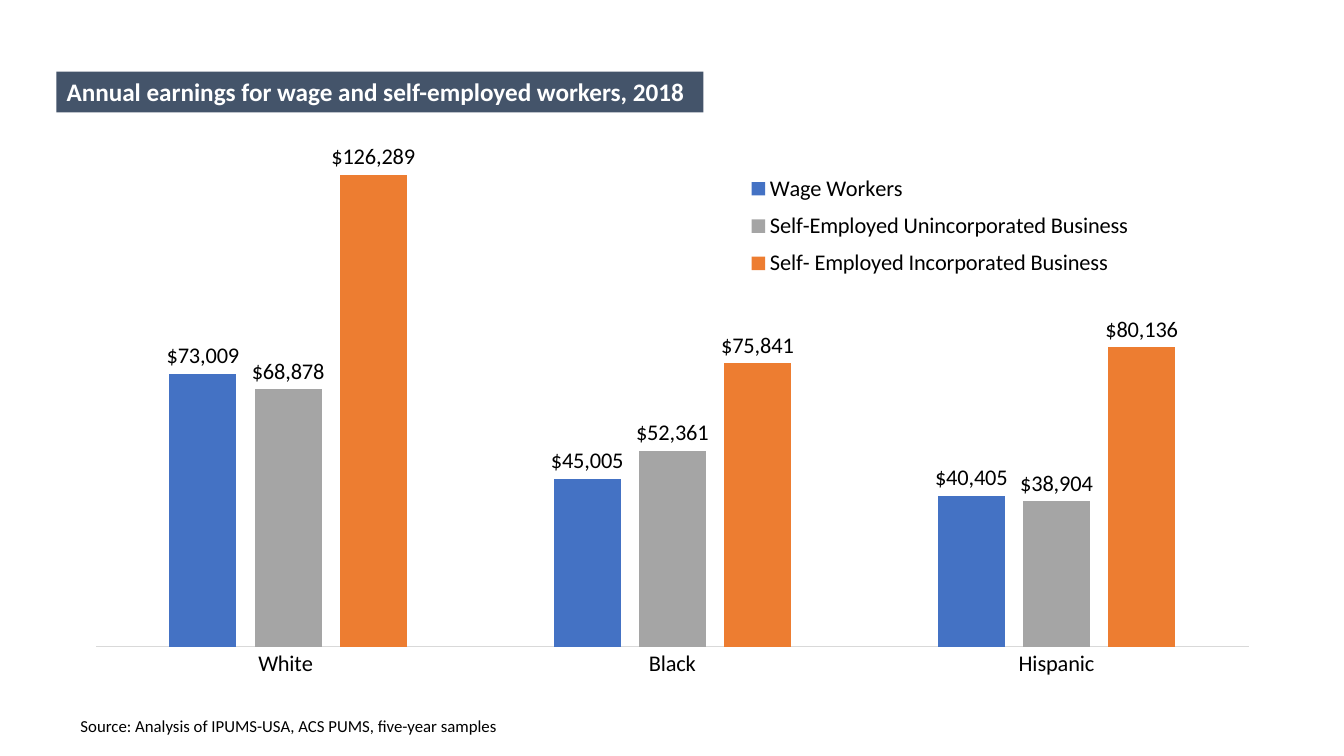
import pptx
import pptx.util
import pptx.dml.color
import pptx.chart.data
import pptx.enum.chart
import pptx.enum.text
import pptx.oxml
from pptx.util import Pt

TITLE = "Annual earnings for wage and self-employed workers, 2018"
SOURCE = "Source: Analysis of IPUMS-USA, ACS PUMS, five-year samples"
GROUPS = ["White ", "Black", "Hispanic"]
EARNINGS = [
    ("Wage Workers", "4472C4", (73009, 45005, 40405)),
    ("Self-Employed Unincorporated Business", "A5A5A5", (68878, 52361, 38904)),
    ("Self- Employed Incorporated Business", "ED7D31", (126289, 75841, 80136)),
]
DOLLARS = r'_("$"* #,##0_);_("$"* \(#,##0\);_("$"* "-"??_);_(@_)'
FONT = "Calibri"
CHART_BOX = (57.6, 22.3, 845.3, 495.4)
PLOT_BOX = (68.6, 88.2, 823.3, 374)
LEGEND_BOX = (519.5, 118, 304, 87)
TITLE_BOX = (40.3, 51.1, 462.2, 29.1)
SOURCE_BOX = (50.4, 507.6, 312, 21.8)


def color(hex_string):
    return pptx.dml.color.RGBColor.from_string(hex_string)


def set_font(font, size, hex_string="000000", bold=False):
    font.name = FONT
    font.size = Pt(size)
    font.bold = bold
    font.color.rgb = color(hex_string)


def manual_layout(box, inner=False):
    chart_left, chart_top, chart_width, chart_height = CHART_BOX
    left, top, width, height = box
    fractions = (
        (left - chart_left) / chart_width,
        (top - chart_top) / chart_height,
        width / chart_width,
        height / chart_height,
    )
    target = '<c:layoutTarget val="inner"/>' if inner else ""
    modes = "".join(f'<c:{axis}Mode val="edge"/>' for axis in "xy")
    sizes = "".join(f'<c:{name} val="{value:.4f}"/>' for name, value in zip("xywh", fractions))
    return pptx.oxml.parse_xml(
        '<c:layout xmlns:c="http://schemas.openxmlformats.org/drawingml/2006/chart">'
        f"<c:manualLayout>{target}{modes}{sizes}</c:manualLayout></c:layout>"
    )


def add_earnings_chart(slide):
    data = pptx.chart.data.CategoryChartData(number_format=DOLLARS)
    data.categories = GROUPS
    for name, _, values in EARNINGS:
        data.add_series(name, values)
    chart = slide.shapes.add_chart(
        pptx.enum.chart.XL_CHART_TYPE.COLUMN_CLUSTERED, *map(Pt, CHART_BOX), data
    ).chart
    set_font(chart.font, 10)
    chart.has_title = False

    plot = chart.plots[0]
    plot.gap_width = 219
    plot.overlap = -27
    plot.vary_by_categories = False
    for series, (_, fill, _) in zip(plot.series, EARNINGS):
        series.format.fill.solid()
        series.format.fill.fore_color.rgb = color(fill)
        labels = series.data_labels
        labels.show_value = True
        labels.number_format = DOLLARS
        labels.number_format_is_linked = False
        labels.position = pptx.enum.chart.XL_LABEL_POSITION.OUTSIDE_END
        set_font(labels.font, 16)

    category_axis = chart.category_axis
    category_axis.major_tick_mark = pptx.enum.chart.XL_TICK_MARK.NONE
    category_axis.format.line.color.rgb = color("D9D9D9")
    category_axis.format.line.width = Pt(0.75)
    set_font(category_axis.tick_labels.font, 16)
    value_axis = chart.value_axis
    value_axis.minimum_scale = 0
    value_axis.maximum_scale = 140000
    value_axis.has_major_gridlines = False
    value_axis.visible = False

    chart.has_legend = True
    legend = chart.legend
    legend.position = pptx.enum.chart.XL_LEGEND_POSITION.BOTTOM
    legend.include_in_layout = False
    set_font(legend.font, 16)

    plot_area = chart.element.find(".//{*}plotArea")
    for layout in plot_area.findall("{*}layout"):
        plot_area.remove(layout)
    plot_area.insert(0, manual_layout(PLOT_BOX, inner=True))
    legend_element = chart.element.find(".//{*}legend")
    for layout in legend_element.findall("{*}layout"):
        legend_element.remove(layout)
    legend_element.find("{*}legendPos").addnext(manual_layout(LEGEND_BOX))


def write_text(shape, box, text, wrap, size, hex_string="000000", bold=False):
    shape.left, shape.top, shape.width, shape.height = map(Pt, box)
    frame = shape.text_frame
    frame.word_wrap = wrap
    frame.auto_size = pptx.enum.text.MSO_AUTO_SIZE.NONE
    frame.vertical_anchor = pptx.enum.text.MSO_ANCHOR.TOP
    paragraph = frame.paragraphs[0]
    paragraph.alignment = pptx.enum.text.PP_ALIGN.LEFT
    paragraph.line_spacing = 1.0
    run = paragraph.add_run()
    run.text = text
    set_font(run.font, size, hex_string, bold)


def main():
    presentation = pptx.Presentation()
    presentation.slide_width = Pt(960)
    presentation.slide_height = Pt(540)
    slide = presentation.slides.add_slide(presentation.slide_layouts[5])

    add_earnings_chart(slide)
    source = slide.shapes.add_textbox(*map(Pt, SOURCE_BOX))
    write_text(source, SOURCE_BOX, SOURCE, False, 12)

    title = slide.shapes.title
    title.element.getparent().append(title.element)
    title.fill.solid()
    title.fill.fore_color.rgb = color("44546A")
    write_text(title, TITLE_BOX, TITLE, True, 18, "FFFFFF", True)

    presentation.save("out.pptx")


if __name__ == "__main__":
    main()
